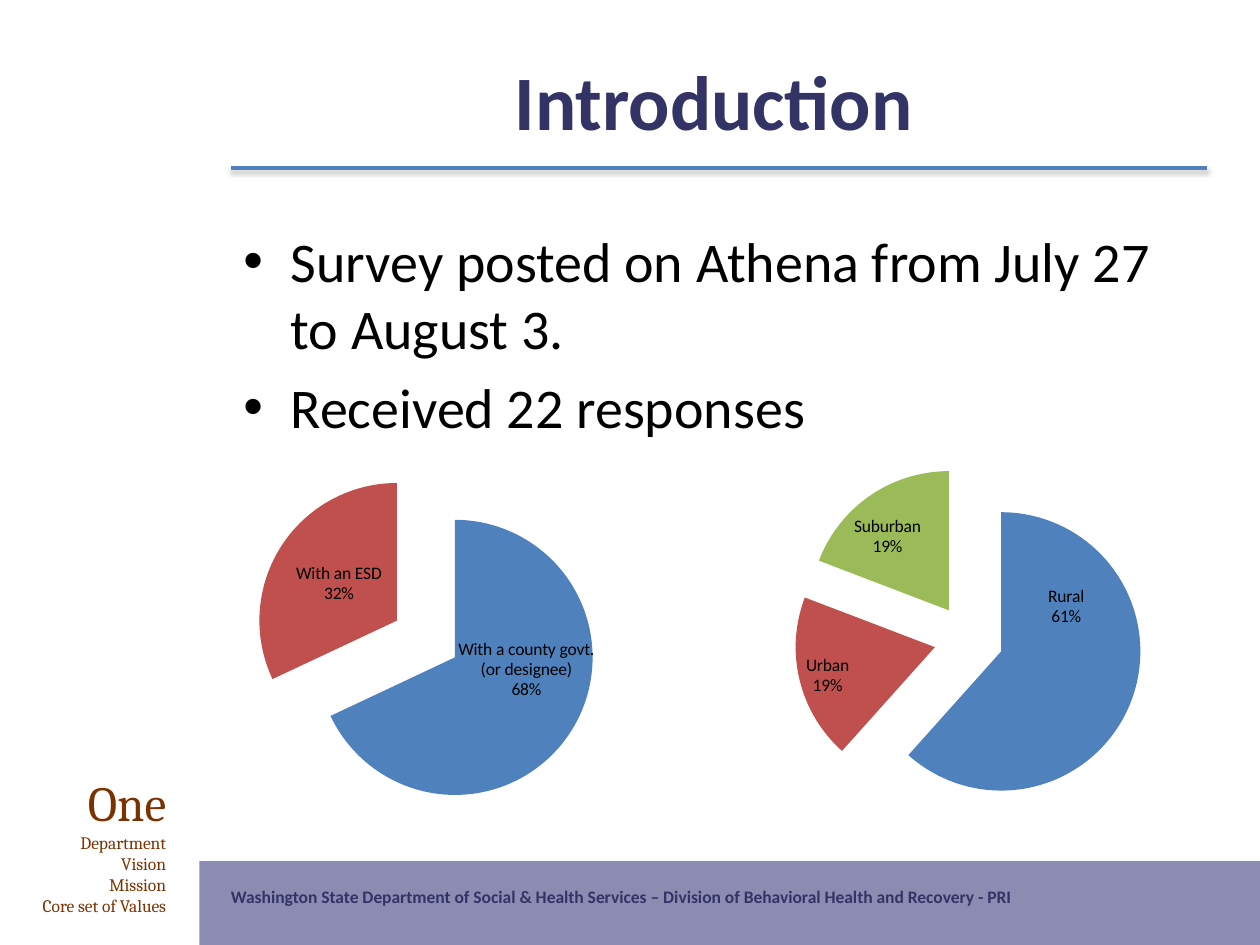
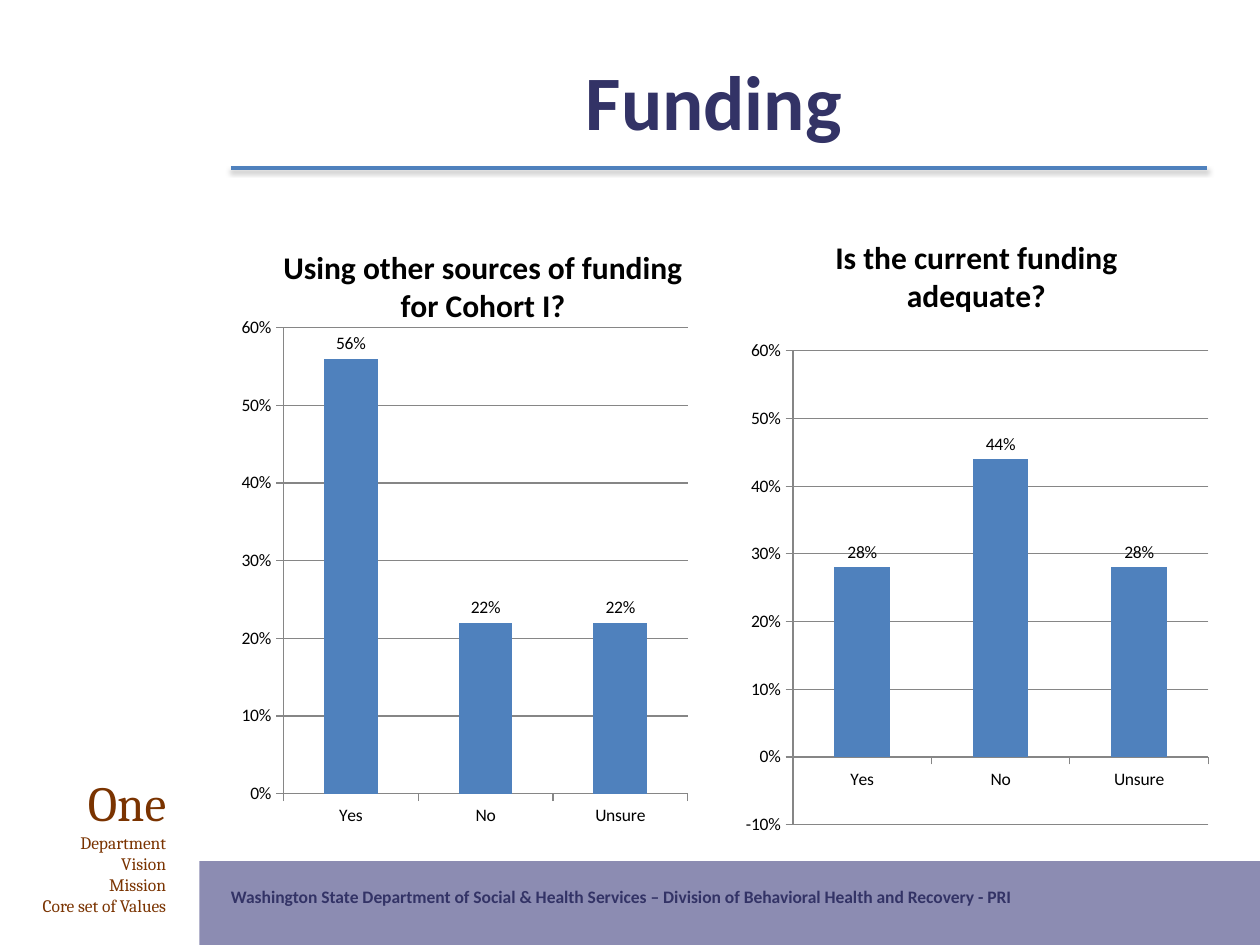
from lxml import etree
from pptx import Presentation
from pptx.chart.data import CategoryChartData
from pptx.dml.color import RGBColor
from pptx.enum.chart import XL_CHART_TYPE, XL_LABEL_POSITION, XL_TICK_MARK
from pptx.enum.shapes import MSO_CONNECTOR, MSO_SHAPE
from pptx.enum.text import MSO_ANCHOR, PP_ALIGN
from pptx.oxml import parse_xml
from pptx.oxml.ns import nsdecls, qn
from pptx.util import Inches, Pt

PIE, COLUMN = XL_CHART_TYPE.PIE, XL_CHART_TYPE.COLUMN_CLUSTERED
OUTSIDE_END = XL_LABEL_POSITION.OUTSIDE_END
TICK_OUTSIDE = XL_TICK_MARK.OUTSIDE
RECTANGLE, STRAIGHT = MSO_SHAPE.RECTANGLE, MSO_CONNECTOR.STRAIGHT
LEFT, CENTER, RIGHT = PP_ALIGN.LEFT, PP_ALIGN.CENTER, PP_ALIGN.RIGHT
TOP, MIDDLE = MSO_ANCHOR.TOP, MSO_ANCHOR.MIDDLE

NAVY, BAND, BROWN, BLACK, GRAY = "333366", "666699", "7A3300", "000000", "868686"
ACCENTS = ["4F81BD", "C0504D", "9BBB59"]
BODY_FONT, MOTTO_FONT = "Calibri", "Cambria"
FOOTER = ("Washington State Department of Social & Health Services – "
          "Division of Behavioral Health and Recovery - PRI")
MOTTO = ["One", "Department", "Vision", "Mission", "Core set of Values"]
# Narrow frame that wraps a long pie label
LABEL_FRAME = (
    '<c:extLst><c:ext uri="{CE6537A1-D6FC-4f65-9D91-7224C49458BB}" '
    'xmlns:c15="http://schemas.microsoft.com/office/drawing/2012/chart">'
    '<c15:layout><c:manualLayout><c:w val="0.2"/><c:h val="0.25"/></c:manualLayout>'
    '</c15:layout></c:ext></c:extLst>')


def color(hex_code):
    return RGBColor.from_string(hex_code)


def style_chart(chart, plot_area):
    """Set the chart's text style and its inner plot area (x, y, w, h as shares)."""
    chart.has_legend = False
    chart.font.size = Pt(10)
    chart.font.name = BODY_FONT
    chart.font.color.rgb = color(BLACK)
    area = chart._chartSpace.chart.plotArea
    for layout in area.findall(qn("c:layout")):
        area.remove(layout)
    x, y, width, height = plot_area
    area.insert(0, parse_xml(
        f'<c:layout {nsdecls("c")}><c:manualLayout><c:layoutTarget val="inner"/>'
        f'<c:xMode val="edge"/><c:yMode val="edge"/><c:x val="{x}"/><c:y val="{y}"/>'
        f'<c:w val="{width}"/><c:h val="{height}"/></c:manualLayout></c:layout>'))


presentation = Presentation()
presentation.slide_width, presentation.slide_height = Inches(10), Inches(7.5)
# The slide is a grid of 120 columns by 90 rows of square cells.
CELL = presentation.slide_width // 120

# Shared band, motto, rule and title
slides = []
for title in ["Introduction", "Funding"]:
    slide = presentation.slides.add_slide(presentation.slide_layouts[6])
    slides.append(slide)

    band = slide.shapes.add_shape(RECTANGLE, 19 * CELL, 82 * CELL, 101 * CELL, 8 * CELL)
    band.shadow.inherit = False
    band.fill.solid()
    band.fill.fore_color.rgb = color(BAND)
    band.line.fill.background()
    band_color = band._element.spPr.find(".//" + qn("a:srgbClr"))
    etree.SubElement(band_color, qn("a:alpha"), val="75000")
    frame = band.text_frame
    frame.vertical_anchor = TOP
    frame.margin_left, frame.margin_top = 3 * CELL, Inches(0.2)
    paragraph = frame.paragraphs[0]
    paragraph.alignment = LEFT
    run = paragraph.add_run()
    run.text = FOOTER
    run.font.size, run.font.name, run.font.bold = Pt(10), BODY_FONT, True
    run.font.color.rgb = color(NAVY)

    frame = slide.shapes.add_textbox(0, 73 * CELL, 17 * CELL, 15 * CELL).text_frame
    frame.word_wrap = True
    for index, line in enumerate(MOTTO):
        paragraph = frame.add_paragraph() if index else frame.paragraphs[0]
        paragraph.alignment = RIGHT
        run = paragraph.add_run()
        run.text = line
        run.font.size, run.font.name = Pt(10 if index else 28), MOTTO_FONT
        run.font.color.rgb = color(BROWN)

    rule = slide.shapes.add_connector(STRAIGHT, 22 * CELL, 16 * CELL, 115 * CELL, 16 * CELL)
    rule.line.color.rgb = color(ACCENTS[0])
    rule.line.width = Pt(2)
    rule._element.spPr.append(parse_xml(
        f'<a:effectLst {nsdecls("a")}><a:outerShdw blurRad="40000" dist="20000" '
        'dir="5400000" rotWithShape="0"><a:srgbClr val="000000"><a:alpha val="38000"/>'
        '</a:srgbClr></a:outerShdw></a:effectLst>'))

    frame = slide.shapes.add_textbox(22 * CELL, 2 * CELL, 92 * CELL, 15 * CELL).text_frame
    frame.word_wrap = True
    frame.vertical_anchor = MIDDLE
    paragraph = frame.paragraphs[0]
    paragraph.alignment = CENTER
    run = paragraph.add_run()
    run.text = title
    run.font.size, run.font.name, run.font.bold = Pt(44), BODY_FONT, True
    run.font.color.rgb = color(NAVY)

introduction, funding = slides

# Introduction: bullets
frame = introduction.shapes.add_textbox(22 * CELL, 21 * CELL, 92 * CELL, 59 * CELL).text_frame
frame.word_wrap = True
bullets = ["Survey posted on Athena from July 27 to August 3.", "Received 22 responses"]
indent = CELL * 9 // 2
for index, text in enumerate(bullets):
    paragraph = frame.add_paragraph() if index else frame.paragraphs[0]
    properties = paragraph._p.get_or_add_pPr()
    properties.set("marL", str(indent))
    properties.set("indent", str(-indent))
    etree.SubElement(properties, qn("a:buFont"), typeface="Arial")
    etree.SubElement(properties, qn("a:buChar"), char="•")
    if index:
        paragraph.space_before = Pt(6.4)
    run = paragraph.add_run()
    run.text = text
    run.font.size, run.font.name = Pt(32), BODY_FONT
    run.font.color.rgb = color(BLACK)

# Introduction: pies as (column, plot width, slices);
# a slice is name, percentage, label shift, label frame
pies = [
    (20, 0.78, [("With a county govt. (or designee)", 68, (0.03, -0.06), LABEL_FRAME),
                ("With an ESD", 32, (0, 0), "")]),
    (70, 0.86, [("Rural", 61, (0, -0.17), ""),
                ("Urban", 19, (-0.09, 0.03), ""),
                ("Suburban", 19, (-0.05, -0.04), "")]),
]
for column, plot_width, slices in pies:
    data = CategoryChartData()
    data.categories = [name for name, *_ in slices]
    data.add_series("Series 1", [percentage for _, percentage, *_ in slices])
    chart = introduction.shapes.add_chart(
        PIE, column * CELL, 40 * CELL, 42 * CELL, 39 * CELL, data).chart
    chart.has_title = False
    style_chart(chart, (0.1, 0.11, plot_width, 0.85))
    series = chart.plots[0].series[0]
    labels = series.data_labels
    labels.show_category_name = labels.show_value = True
    for index, (name, percentage, (shift_x, shift_y), label_frame) in enumerate(slices):
        fill = series.points[index].format.fill
        fill.solid()
        fill.fore_color.rgb = color(ACCENTS[index])
        labels._element.insert(index, parse_xml(
            f'<c:dLbl {nsdecls("c")}><c:idx val="{index}"/><c:layout><c:manualLayout>'
            f'<c:x val="{shift_x}"/><c:y val="{shift_y}"/></c:manualLayout></c:layout>'
            '<c:numFmt formatCode="0&quot;%&quot;" sourceLinked="0"/>'
            '<c:dLblPos val="ctr"/><c:showLegendKey val="0"/><c:showVal val="1"/>'
            '<c:showCatName val="1"/><c:showSerName val="0"/><c:showPercent val="0"/>'
            '<c:showBubbleSize val="0"/><c:separator>\n</c:separator>'
            f'{label_frame}</c:dLbl>'))
    explosion = parse_xml(f'<c:explosion {nsdecls("c")} val="25"/>')
    series._element.find(qn("c:dPt")).addprevious(explosion)

# Funding: columns as (question, cells, plot area, axis minimum, shares)
questions = [
    ("Using other sources of funding for Cohort I?", (21, 21, 50, 60),
     (0.12, 0.17, 0.77, 0.74), 0, (0.56, 0.22, 0.22)),
    ("Is the current funding adequate?", (70, 20, 46, 61),
     (0.12, 0.22, 0.86, 0.74), -0.1, (0.28, 0.44, 0.28)),
]
for question, cells, plot_area, minimum, shares in questions:
    data = CategoryChartData(number_format="0%")
    data.categories = ["Yes", "No", "Unsure"]
    data.add_series(question, shares)
    chart = funding.shapes.add_chart(COLUMN, *[n * CELL for n in cells], data).chart
    style_chart(chart, plot_area)

    chart.has_title = True
    chart.chart_title.include_in_layout = False
    run = chart.chart_title.text_frame.paragraphs[0].add_run()
    run.text = question
    run.font.size, run.font.name, run.font.bold = Pt(18), BODY_FONT, True
    run.font.color.rgb = color(BLACK)

    value_axis = chart.value_axis
    value_axis.minimum_scale, value_axis.maximum_scale = minimum, 0.6
    value_axis.major_unit = 0.1
    value_axis.tick_labels.number_format = "0%"
    value_axis.tick_labels.number_format_is_linked = False
    value_axis.major_gridlines.format.line.color.rgb = color(GRAY)
    for axis in (chart.category_axis, value_axis):
        axis.major_tick_mark = TICK_OUTSIDE
        axis.format.line.color.rgb = color(GRAY)

    plot = chart.plots[0]
    plot.vary_by_categories = False
    plot.gap_width = 150
    fill = plot.series[0].format.fill
    fill.solid()
    fill.fore_color.rgb = color(ACCENTS[0])
    labels = plot.series[0].data_labels
    labels.show_value = True
    labels.number_format, labels.number_format_is_linked = "0%", False
    labels.position = OUTSIDE_END

presentation.save("out.pptx")
